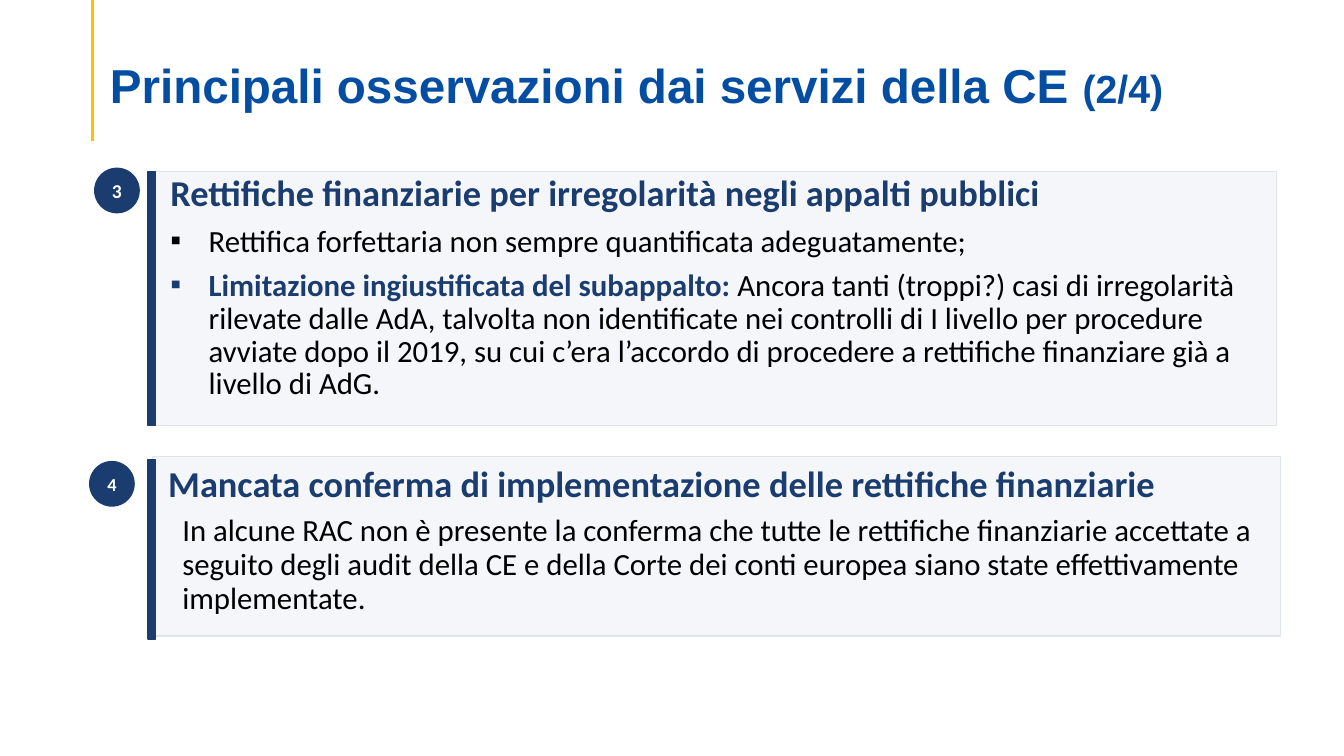
"""Build the slide on the main observations from the EC services (2/4)."""
import pptx
import pptx.chart.data
import pptx.dml.color
import pptx.enum.shapes
import pptx.enum.text
import pptx.util
from lxml import etree

Inches = pptx.util.Inches
Pt = pptx.util.Pt
Shapes = pptx.enum.shapes.MSO_SHAPE
Anchor = pptx.enum.text.MSO_ANCHOR
Align = pptx.enum.text.PP_ALIGN
NAVY, BLACK, WHITE = "1A3C6E", "000000", "FFFFFF"
PANEL, BORDER, GOLD, BLUE = "F5F6FA", "E0E4EF", "FFC000", "034EA2"
DRAWING = "{http://schemas.openxmlformats.org/drawingml/2006/main}"


def write(para, text, size=22, color=BLACK, bold=False, font="Calibri", align=Align.LEFT,
          left=0, bullet=None, line=None, before=0, after=0):
    """Add a formatted span to a paragraph and set the paragraph layout."""
    props = para._p.get_or_add_pPr()
    props.set("marL", str(Inches(left)))
    props.set("indent", str(-Inches(left) if bullet else 0))
    if bullet and props.find(DRAWING + "buChar") is None:
        etree.SubElement(props, DRAWING + "buFont").set("typeface", "Arial")
        etree.SubElement(props, DRAWING + "buChar").set("char", bullet)
    para.alignment = align
    para.space_before, para.space_after = Pt(before), Pt(after)
    if line:
        para.line_spacing = line
    span = para.add_run()
    span.text = text
    span.font.name, span.font.size, span.font.bold = font, Pt(size), bold
    span.font.color.rgb = pptx.dml.color.RGBColor.from_string(color)


def add_block(page, kind, place, fill, border):
    """Add a filled shape with a thin outline and no shadow."""
    block = page.shapes.add_shape(kind, *map(Inches, place))
    block.shadow.inherit = False
    block.fill.solid()
    block.fill.fore_color.rgb = pptx.dml.color.RGBColor.from_string(fill)
    block.line.color.rgb = pptx.dml.color.RGBColor.from_string(border)
    block.line.width = Pt(1)
    return block


deck = pptx.Presentation()
deck.slide_width, deck.slide_height = Inches(13.33), Inches(7.5)
page = deck.slides.add_slide(deck.slide_layouts[5])

rule = page.shapes.add_connector(pptx.enum.shapes.MSO_CONNECTOR.STRAIGHT,
                                 Inches(0.92), Inches(0), Inches(0.92), Inches(1.4))
rule.line.color.rgb = pptx.dml.color.RGBColor.from_string(GOLD)
rule.line.width = Pt(2.25)
etree.SubElement(rule._element.spPr, DRAWING + "effectLst")

title = page.shapes.title
title.left, title.top, title.width, title.height = map(Inches, (0.99, 0.27, 11.96, 0.86))
title.text_frame.vertical_anchor = Anchor.BOTTOM
title.text_frame.margin_bottom = 0
title.text_frame.word_wrap = True
for text, size in (("Principali osservazioni dai servizi della CE ", 34), ("(2/4)", 28)):
    write(title.text_frame.paragraphs[0], text, size=size, color=BLUE, bold=True,
          font="Arial", line=0.9)

for number, size, left, top in (("3", 14, 0.94, 1.67), ("4", 13, 0.89, 4.58)):
    badge = add_block(page, Shapes.OVAL, (left, top, 0.44, 0.44), NAVY, NAVY)
    frame = badge.text_frame
    frame.margin_left = frame.margin_right = frame.margin_top = frame.margin_bottom = 0
    frame.vertical_anchor = Anchor.MIDDLE
    write(frame.paragraphs[0], number, size=size, color=WHITE, bold=True, align=Align.CENTER)

for left, top, bar_top, height in ((1.47, 1.7, 1.7, 2.52), (1.51, 4.53, 4.56, 1.78)):
    panel = add_block(page, Shapes.RECTANGLE, (left, top, 11.19, height), PANEL, BORDER)
    add_block(page, Shapes.RECTANGLE, (1.47, bar_top, 0.07, height), NAVY, NAVY)

frame = panel.text_frame
frame.word_wrap = True
frame.vertical_anchor = Anchor.TOP
write(frame.paragraphs[0], "Mancata conferma di implementazione delle rettifiche finanziarie",
      size=26, color=NAVY, bold=True, left=0.06)
write(frame.add_paragraph(),
      "In alcune RAC non è presente la conferma che tutte le rettifiche finanziarie accettate a "
      "seguito degli audit della CE e della Corte dei conti europea siano state effettivamente "
      "implementate.", left=0.2, line=Pt(24.4), before=6)

box = page.shapes.add_textbox(*map(Inches, (1.69, 1.57, 10.97, 2.52)))
frame = box.text_frame
frame.word_wrap = True
frame.vertical_anchor = Anchor.MIDDLE
frame.margin_left = frame.margin_right = frame.margin_top = frame.margin_bottom = 0
write(frame.paragraphs[0], "Rettifiche finanziarie per irregolarità negli appalti pubblici",
      size=26, color=NAVY, bold=True)
write(frame.add_paragraph(), "Rettifica forfettaria non sempre quantificata adeguatamente;",
      left=0.38, bullet="▪", before=6, after=8)
limit = frame.add_paragraph()
write(limit, "Limitazione ingiustificata del subappalto: ", color=NAVY, bold=True,
      left=0.38, bullet="▪", line=Pt(23.4))
write(limit, "Ancora tanti (troppi?) casi di irregolarità rilevate dalle AdA, talvolta non "
      "identificate nei controlli di I livello per procedure avviate dopo il 2019, su cui c’era "
      "l’accordo di procedere a rettifiche finanziare già a livello di AdG.",
      left=0.38, bullet="▪", line=Pt(23.4))

deck.save("out.pptx")
